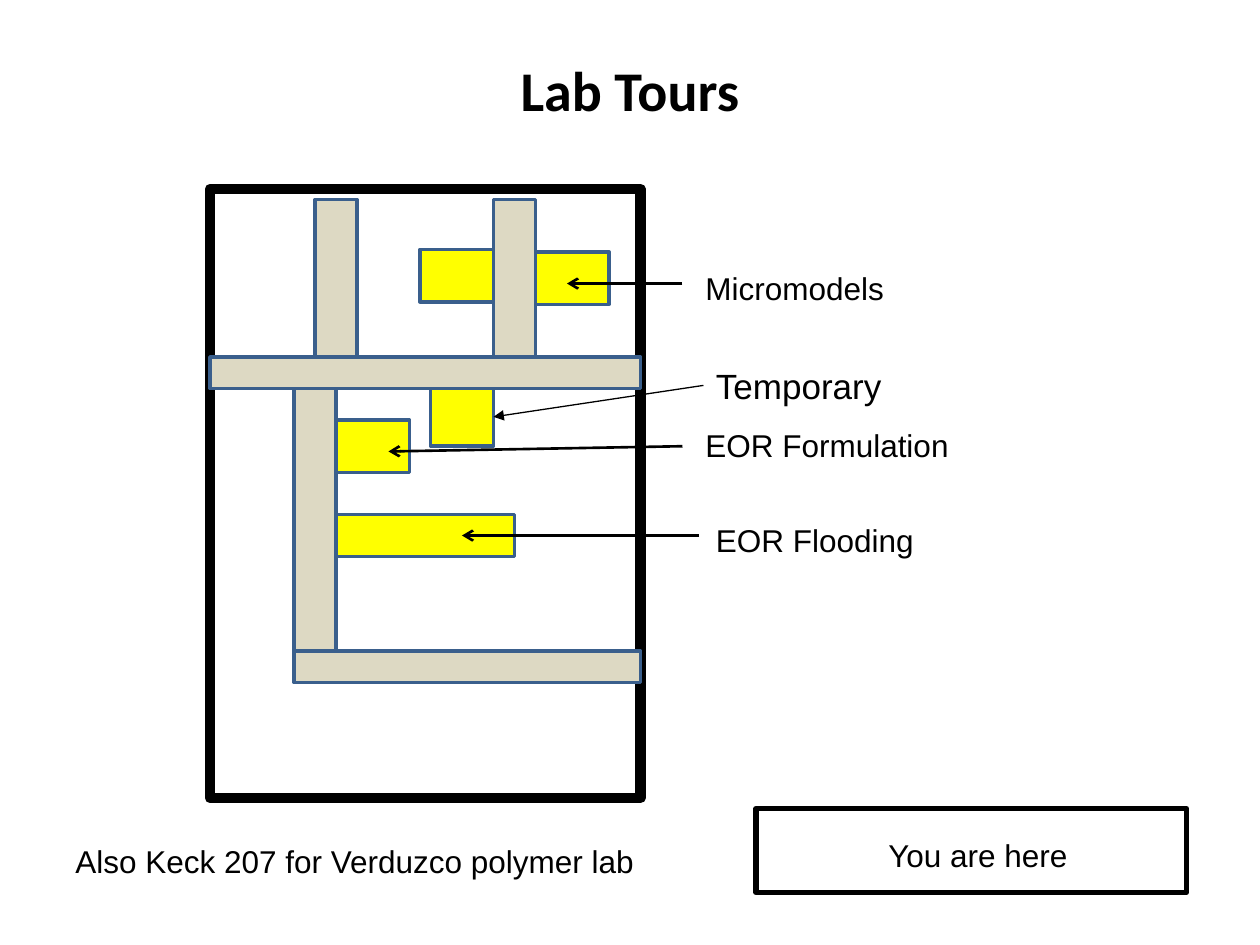
from lxml import etree
from pptx import Presentation
from pptx.dml.color import RGBColor
from pptx.enum import shapes, text
from pptx.oxml.ns import qn
from pptx.util import Pt

BLACK = RGBColor(0x00, 0x00, 0x00)
CORRIDOR_TAN = RGBColor(0xDD, 0xD9, 0xC3)
ROOM_YELLOW = RGBColor(0xFF, 0xFF, 0x00)
WALL_BLUE = RGBColor(0x3A, 0x5F, 0x8C)

CORRIDORS = [
    (48, 264, 198, 18),
    (0, 96, 246, 18),
    (48, 114, 24, 150),
    (60, 6, 24, 90),
    (162, 6, 24, 90),
]
ROOMS = [
    (72, 186, 102, 24),
    (72, 132, 42, 30),
    (186, 36, 42, 30),
    (120, 34.5, 42, 30),
    (126, 114, 36, 33),
]
CALLOUTS = [
    ("Micromodels", (276, 42, 126, 30), 18, (270, 54), (204, 54), 1.5, "arrow"),
    ("EOR Formulation", (276, 132, 156, 30), 18, (270, 147), (102, 150), 1.5, "arrow"),
    ("EOR Flooding", (282, 186, 132, 29), 18, (279.5, 198), (144, 198), 1.5, "arrow"),
    ("Temporary", (282, 96.5, 120, 31.5), 20, (282, 112.25), (162, 130.25), 0.75, "triangle"),
]


def offset_box(box, part):
    return box[0] + part[0], box[1] + part[1], part[2], part[3]


def write_text(frame, content, size=18, font="Arial", bold=False,
               align=text.PP_ALIGN.LEFT, anchor=text.MSO_ANCHOR.TOP, wrap=True):
    frame.word_wrap = wrap
    frame.vertical_anchor = anchor
    paragraph = frame.paragraphs[0]
    paragraph.alignment = align
    run = paragraph.add_run()
    run.text = content
    run.font.size = Pt(size)
    run.font.name = font
    run.font.bold = bold
    run.font.color.rgb = BLACK


def add_label(slide, box, content, **text_format):
    label = slide.shapes.add_textbox(*map(Pt, box))
    write_text(label.text_frame, content, **text_format)
    label.text_frame.auto_size = text.MSO_AUTO_SIZE.SHAPE_TO_FIT_TEXT


def add_rectangle(slide, box, line_color, line_width, fill=None):
    rectangle = slide.shapes.add_shape(shapes.MSO_SHAPE.RECTANGLE, *map(Pt, box))
    rectangle.shadow.inherit = False
    if fill is None:
        rectangle.fill.background()
    else:
        rectangle.fill.solid()
        rectangle.fill.fore_color.rgb = fill
    rectangle.line.color.rgb = line_color
    rectangle.line.width = Pt(line_width)


def add_arrow(slide, start, end, width, head):
    arrow = slide.shapes.add_connector(
        shapes.MSO_CONNECTOR.STRAIGHT, *map(Pt, (*start, *end)))
    arrow.line.color.rgb = BLACK
    arrow.line.width = Pt(width)
    properties = arrow._element.spPr
    line = properties.find(qn("a:ln"))
    etree.SubElement(line, qn("a:tailEnd"), type=head)
    etree.SubElement(properties, qn("a:effectLst"))


def add_title(slide, box):
    title = slide.shapes.title
    title.left, title.top, title.width, title.height = map(Pt, box)
    write_text(title.text_frame, "Lab Tours", size=32, font="Calibri", bold=True,
               align=text.PP_ALIGN.CENTER, anchor=text.MSO_ANCHOR.MIDDLE)


def add_floor_plan(slide, box):
    add_rectangle(slide, box, BLACK, 6)
    for parts, fill in ((CORRIDORS, CORRIDOR_TAN), (ROOMS, ROOM_YELLOW)):
        for part in parts:
            add_rectangle(slide, offset_box(box, part), WALL_BLUE, 2, fill=fill)


def add_callouts(slide, box):
    left, top = box[:2]
    for content, part, size, start, end, width, head in CALLOUTS:
        add_label(slide, offset_box(box, part), content, size=size)
        add_arrow(slide, (left + start[0], top + start[1]),
                  (left + end[0], top + end[1]), width, head)


def add_location_box(slide, box):
    add_rectangle(slide, box, BLACK, 3)
    add_label(slide, offset_box(box, (68.5, 12, 118, 29)), "You are here", wrap=False)


def main():
    presentation = Presentation()
    presentation.slide_width, presentation.slide_height = Pt(720), Pt(540)
    slide = presentation.slides.add_slide(presentation.slide_layouts[5])
    plan_box = (120, 108, 246, 348)
    add_title(slide, (36, 6, 648, 90))
    add_floor_plan(slide, plan_box)
    add_callouts(slide, plan_box)
    add_location_box(slide, (432, 462, 246, 48))
    add_label(slide, (36, 477.5, 336, 29), "Also Keck 207 for Verduzco polymer lab")
    presentation.save("out.pptx")


if __name__ == "__main__":
    main()
